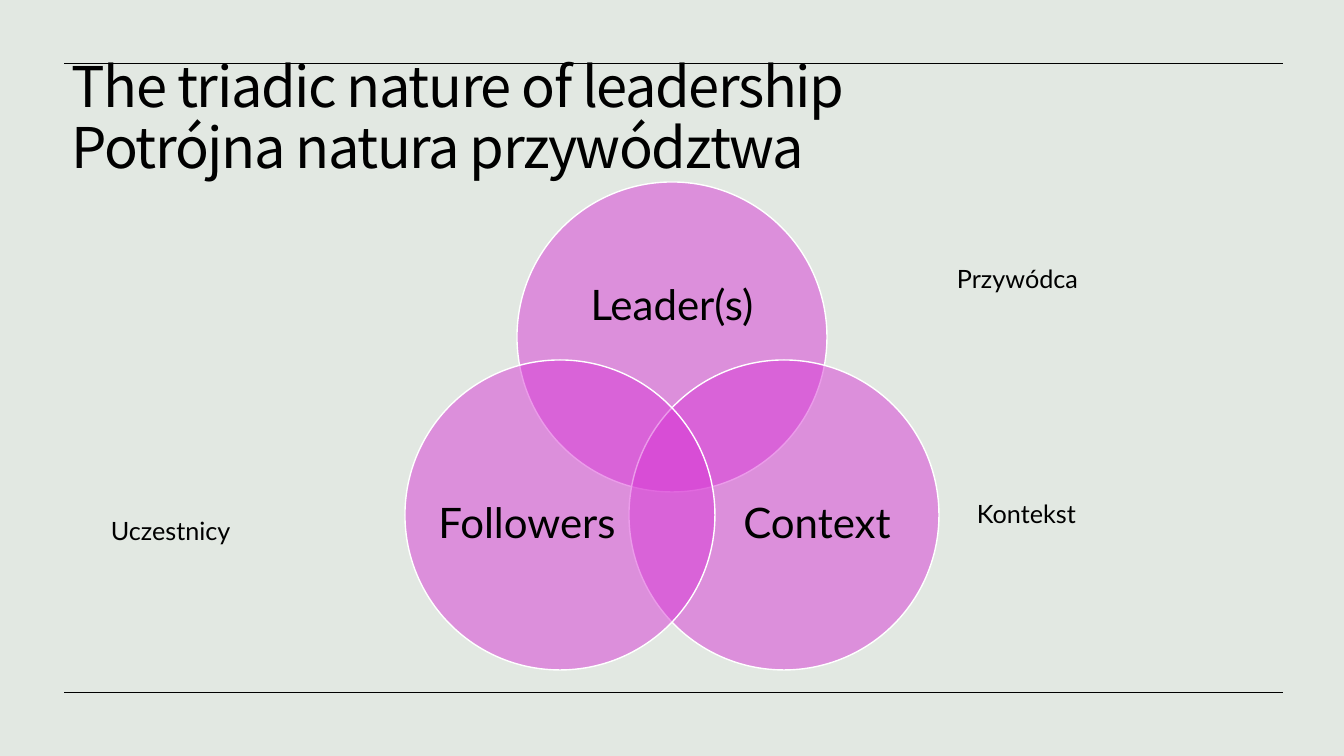
import pptx
import pptx.dml.color
import pptx.enum.shapes
import pptx.enum.text
import pptx.oxml.ns
import pptx.oxml.xmlchemy
import pptx.util

THEME = {
    "background": pptx.dml.color.RGBColor.from_string("E2E8E2"),
    "ink": pptx.dml.color.RGBColor.from_string("000000"),
    "circle": pptx.dml.color.RGBColor.from_string("D838D6"),
    "outline": pptx.dml.color.RGBColor.from_string("FFFFFF"),
    "title": {"name": "Noto Sans CJK KR", "size": pptx.util.Pt(40)},
    "label": {"name": "Lato", "size": pptx.util.Pt(30)},
    "translation": {"name": "Lato", "size": pptx.util.Pt(18)},
}
EMU_PER_PX = 914400 / 100.8
ALIGN = pptx.enum.text.PP_ALIGN
ANCHOR = pptx.enum.text.MSO_ANCHOR


def px(*lengths):
    return [round(length * EMU_PER_PX) for length in lengths]


def add_text(shapes, box, text, style, frame_format, paragraph_format):
    """Add a wrapped text box and return its paragraph."""
    frame = shapes.add_textbox(*px(*box)).text_frame
    for name, value in {"word_wrap": True, **frame_format}.items():
        setattr(frame, name, value)
    paragraph = frame.paragraphs[0]
    paragraph.text = text
    for name, value in paragraph_format.items():
        setattr(paragraph, name, value)
    for run in paragraph.runs:
        for name, value in THEME[style].items():
            setattr(run.font, name, value)
        run.font.color.rgb = THEME["ink"]
    return paragraph


presentation = pptx.Presentation()
presentation.slide_width, presentation.slide_height = px(1344, 756)
slide = presentation.slides.add_slide(presentation.slide_layouts[6])
slide.background.fill.solid()
slide.background.fill.fore_color.rgb = THEME["background"]

# Rules above and below the content
for y in (63, 692):
    rule = slide.shapes.add_connector(
        pptx.enum.shapes.MSO_CONNECTOR.STRAIGHT, *px(1283, y, 64, y))
    rule.line.color.rgb = THEME["ink"]
    rule.line.width = pptx.util.Pt(0.5)
    rule._element.spPr.append(pptx.oxml.xmlchemy.OxmlElement("a:effectLst"))

# Three overlapping circles
DIAMETER = 310
venn = slide.shapes.add_group_shape().shapes
for text, left, top, label_box in (
    ("Leader(s)", 517, 182, (558, 237, 228, 139)),
    ("Context", 629, 360, (724, 440, 186, 170)),
    ("Followers", 405, 360, (434, 440, 186, 170)),
):
    circle = venn.add_shape(pptx.enum.shapes.MSO_SHAPE.OVAL,
                            *px(left, top, DIAMETER, DIAMETER))
    circle.shadow.inherit = False
    circle.fill.solid()
    circle.fill.fore_color.rgb = THEME["circle"]
    circle.line.color.rgb = THEME["outline"]
    circle.line.width = pptx.util.Pt(1)
    fill_color = next(circle._element.spPr.iter(pptx.oxml.ns.qn("a:srgbClr")))
    alpha = pptx.oxml.xmlchemy.OxmlElement("a:alpha")
    alpha.set("val", "50000")
    fill_color.append(alpha)
    add_text(venn, label_box, text, "label",
             {"vertical_anchor": ANCHOR.MIDDLE, "margin_left": 0,
              "margin_right": 0, "margin_top": 0, "margin_bottom": 0},
             {"alignment": ALIGN.CENTER, "line_spacing": 0.9})

title = add_text(slide.shapes, (62, 53, 1218, 156),
                 "The triadic nature of leadership\vPotrójna natura przywództwa",
                 "title", {"vertical_anchor": ANCHOR.TOP},
                 {"line_spacing": pptx.util.Pt(43.5)})
for run in title.runs:
    run._r.get_or_add_rPr().set("spc", "-100")

# Polish translations beside the circles
for text, box in (
    ("Przywódca", (947, 258, 325, 40)),
    ("Kontekst", (967, 493, 303, 40)),
    ("Uczestnicy", (101, 510, 291, 40)),
):
    add_text(slide.shapes, box, text, "translation",
             {"auto_size": pptx.enum.text.MSO_AUTO_SIZE.SHAPE_TO_FIT_TEXT}, {})

presentation.save("out.pptx")
